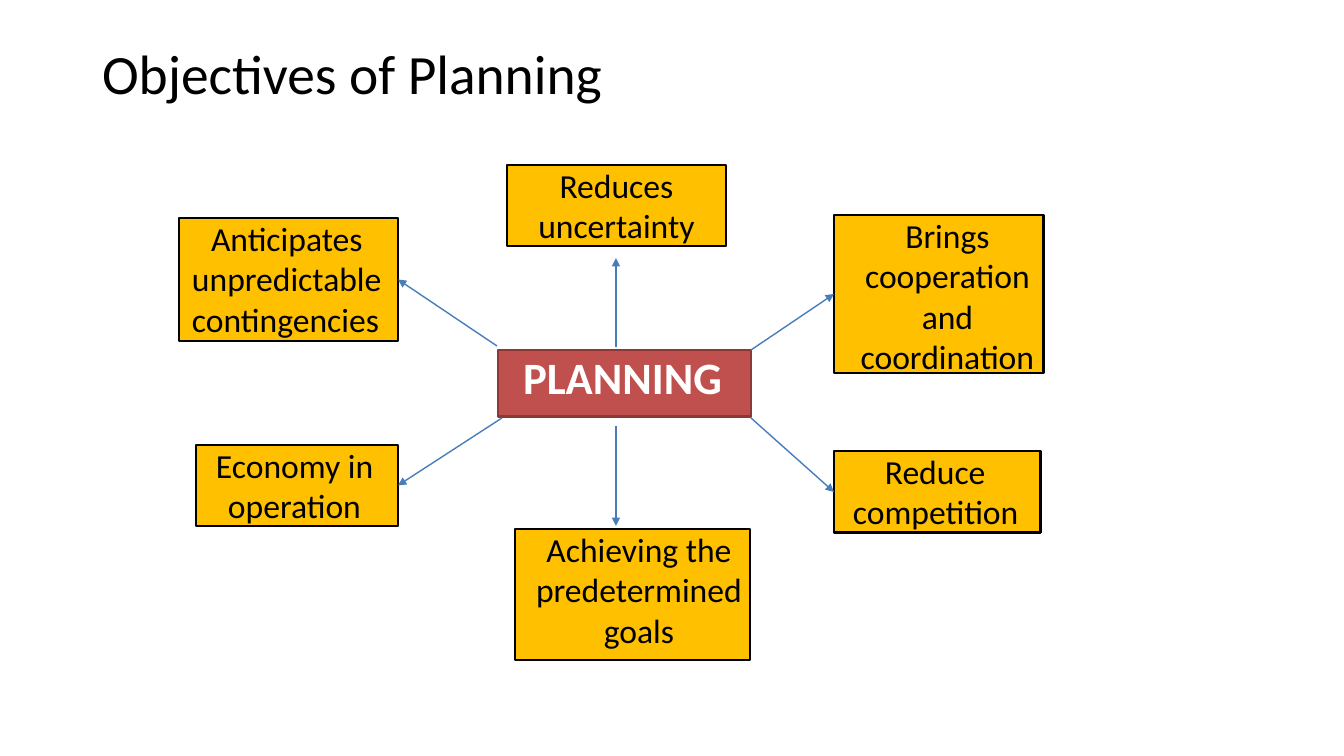
from lxml import etree
from pptx import Presentation
from pptx.dml.color import RGBColor
from pptx.enum.shapes import MSO_CONNECTOR as Connector, MSO_SHAPE as Shape
from pptx.enum.text import MSO_ANCHOR as Anchor, MSO_AUTO_SIZE as AutoSize, PP_ALIGN as Align
from pptx.oxml.ns import qn
from pptx.util import Pt

FONT = "Calibri"
BLACK, WHITE, GOLD = "000000", "FFFFFF", "FFC000"
RED, DARK_RED, BLUE = "C0504D", "8B3836", "497DBA"
TOP, LEFT, BOTTOM, RIGHT = range(4)
PX = 12192000 / 1344

TITLE = ("Objectives of Planning", (92, 40, 1159, 74))
HUB = ("PLANNING", (498, 350, 253, 67), Align.LEFT, (25, 0))
# text, (left, top, width, height), alignment, (left margin, first-line indent),
# arrow start, arrow end as a side of the box or as a point
OBJECTIVES = [
    ("Anticipates unpredictable contingencies", (179, 218, 219, 123), Align.LEFT, (13, 19),
     (497, 346), RIGHT),
    ("Economy in operation", (196, 445, 202, 81), Align.LEFT, (32, -12),
     (502, 418), RIGHT),
    ("Achieving the predetermined goals", (515, 529, 235, 131), Align.CENTER, (13, 0),
     (616, 426), (616, 526)),
    ("Reduce competition", (834, 451, 207, 82), Align.LEFT, (19, 32),
     (751, 418), LEFT),
    ("Brings cooperation and coordination", (834, 215, 210, 158), Align.CENTER, (17, 0),
     (751, 350), LEFT),
    ("Reduces\nuncertainty", (507, 165, 219, 81), Align.CENTER, (0, 0),
     (616, 347), (616, 258)),
]


def px(length):
    return round(length * PX)


def rgb(color):
    return RGBColor.from_string(color)


def style(para, size, color, bold=False):
    for span in para.runs:
        span.font.name, span.font.size, span.font.bold = FONT, Pt(size), bold
        span.font.color.rgb = rgb(color)


def add_box(slide, text, place, align, indent, fill, line, size, color, bold=False):
    box = slide.shapes.add_shape(Shape.RECTANGLE, *map(px, place))
    box.shadow.inherit = False
    box.fill.solid()
    box.fill.fore_color.rgb = rgb(fill)
    box.line.color.rgb = rgb(line)
    box.line.width = Pt(2)
    frame = box.text_frame
    frame.word_wrap = True
    frame.vertical_anchor = Anchor.TOP
    frame.margin_left = frame.margin_top = frame.margin_right = frame.margin_bottom = 0
    frame.text = text
    for para in frame.paragraphs:
        para.alignment = align
        properties = para._p.get_or_add_pPr()
        for name, length in zip(("marL", "indent"), indent):
            properties.set(name, str(px(length)))
        style(para, size, color, bold)
    return box


def add_arrow(slide, start, end, box):
    """Draw an arrow to a point, or to the middle of a side of the box."""
    joined = isinstance(end, int)
    target = start if joined else end
    arrow = slide.shapes.add_connector(Connector.STRAIGHT, *map(px, start + target))
    if joined:
        arrow.end_connect(box, end)
    arrow.line.color.rgb = rgb(BLUE)
    arrow.line.width = Pt(1)
    etree.SubElement(arrow.line._get_or_add_ln(), qn("a:tailEnd"), type="triangle")
    etree.SubElement(arrow._element.spPr, qn("a:effectLst"))


def set_title(slide, text, place):
    title = slide.shapes.title
    title.left, title.top, title.width, title.height = map(px, place)
    frame = title.text_frame
    frame.text = text
    frame.word_wrap = True
    frame.auto_size = AutoSize.NONE
    frame.vertical_anchor = Anchor.MIDDLE
    para = frame.paragraphs[0]
    para.alignment = Align.LEFT
    para.line_spacing = 0.9
    style(para, 39.6, BLACK)


def main():
    deck = Presentation()
    deck.slide_width, deck.slide_height = px(1344), px(756)
    slide = deck.slides.add_slide(deck.slide_layouts[5])
    set_title(slide, *TITLE)
    add_box(slide, *HUB, RED, DARK_RED, 32, WHITE, bold=True)
    for text, place, align, indent, start, end in OBJECTIVES:
        box = add_box(slide, text, place, align, indent, GOLD, BLACK, 24, BLACK)
        add_arrow(slide, start, end, box)
    deck.save("out.pptx")


if __name__ == "__main__":
    main()
